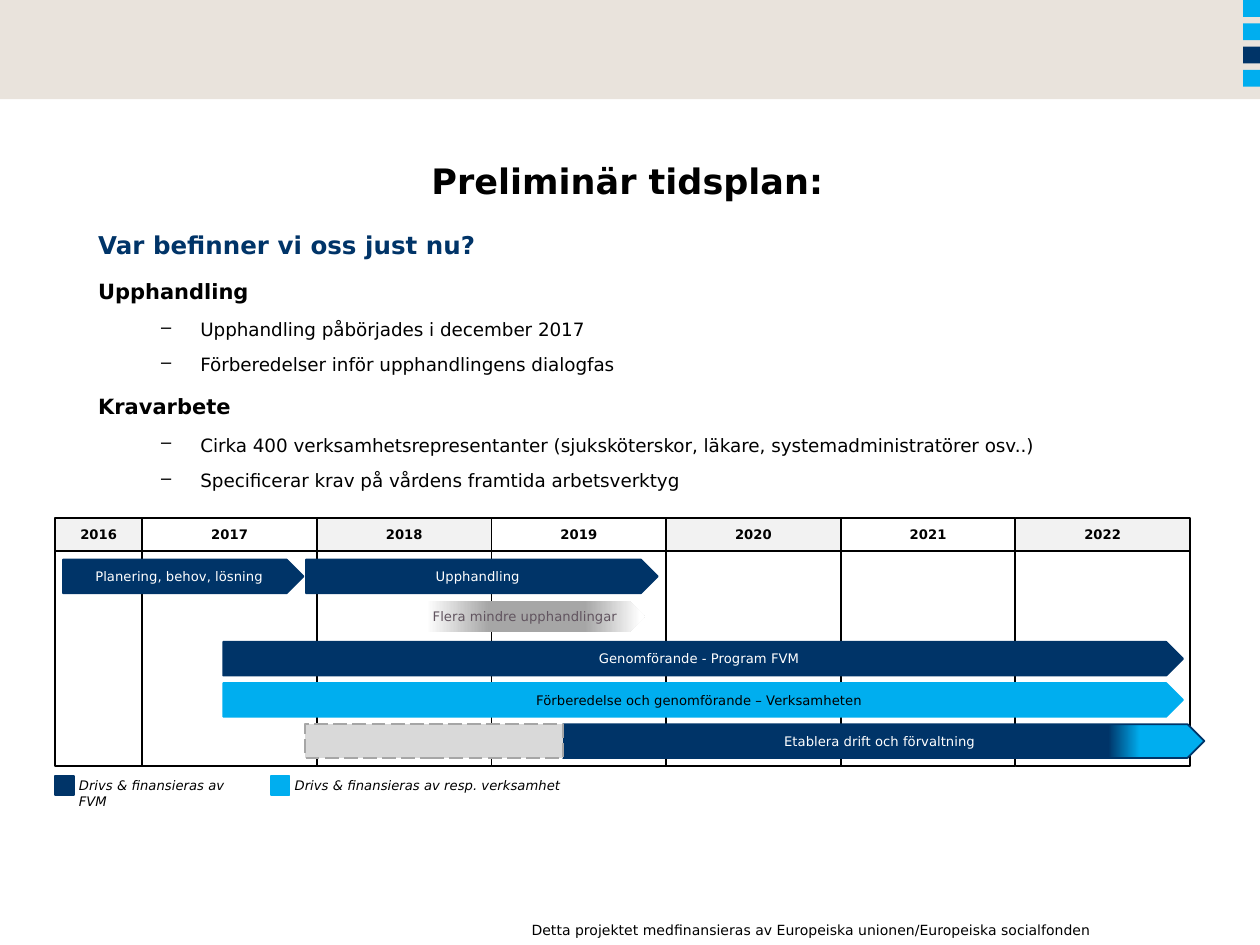
from lxml.etree import SubElement
from pptx import Presentation
from pptx.dml.color import RGBColor
from pptx.enum.dml import MSO_LINE
from pptx.enum.shapes import MSO_SHAPE
from pptx.enum.text import MSO_ANCHOR, PP_ALIGN
from pptx.oxml.ns import qn
from pptx.util import Cm, Pt

THEME = {
    "font": "DejaVu Sans",
    "navy": "003468", "cyan": "00AEEF", "sand": "E9E3DC", "black": "000000",
    "white": "FFFFFF", "light": "F2F2F2", "pale": "D9D9D9", "gray": "A6A6A6",
    "muted": "61545F",
    "title": 20, "question": 14, "heading": 12, "item": 10.5, "footer": 8, "label": 7.5,
}

# Content
TITLE = "Preliminär tidsplan:"
QUESTION = "Var befinner vi oss just nu?"
SECTIONS = [
    ("Upphandling", ["Upphandling påbörjades i december 2017",
                     "Förberedelser inför upphandlingens dialogfas"]),
    ("Kravarbete", ["Cirka 400 verksamhetsrepresentanter (sjuksköterskor, läkare, "
                    "systemadministratörer osv..)",
                    "Specificerar krav på vårdens framtida arbetsverktyg"]),
]
YEARS = [("2016", 0.5), ("2017", 1), ("2018", 1), ("2019", 1),
         ("2020", 1), ("2021", 1), ("2022", 1)]  # label, share of a year shown
FADE_GRAY = [(6, "white"), (33, "gray"), (74, "gray"), (98, "white")]
NAVY_TO_CYAN = [(85, "navy"), (90, "cyan")]
# row, left, width, fill or gradient stops, outline, text colour, label
PHASES = [
    (0, 1.27, 4.85, "navy", "navy", "white", "Planering, behov, lösning"),
    (0, 6.17, 7.09, "navy", "navy", "white", "Upphandling"),
    (1, 8.31, 4.7, FADE_GRAY, None, "muted", "Flera mindre upphandlingar"),
    (2, 4.5, 19.35, "navy", "navy", "white", "Genomförande - Program FVM"),
    (3, 4.5, 19.35, "cyan", "cyan", "black",
     "Förberedelse och genomförande – Verksamheten"),
    (4, 11.35, 12.93, NAVY_TO_CYAN, "navy", "white", "Etablera drift och förvaltning"),
]
LEGEND = [(1.11, 3.78, "navy", "Drivs & finansieras av FVM"),
          (5.46, 5.8, "cyan", "Drivs & finansieras av resp. verksamhet")]
FOOTER = "Detta projektet medfinansieras av Europeiska unionen/Europeiska socialfonden"
MARKS = ["cyan", "cyan", "navy", "cyan"]

# Timeline geometry in centimetres
GRID_LEFT, GRID_TOP, YEAR_WIDTH = 1.11, 10.44, 3.52
HEADER_HEIGHT, BODY_HEIGHT = 0.67, 4.34
ROW_TOP, ROW_PITCH, BAR_HEIGHT = 11.28, 0.83, 0.68


def color(name):
    return RGBColor.from_string(THEME[name])


def style(paragraph, size, ink="black", bold=False, italic=False):
    font = paragraph.font
    font.name, font.size = THEME["font"], Pt(THEME[size])
    font.bold, font.italic = bold, italic
    font.color.rgb = color(ink)


def set_frame(frame, insets, anchor=MSO_ANCHOR.TOP):
    frame.word_wrap = True
    frame.vertical_anchor = anchor
    (frame.margin_left, frame.margin_top,
     frame.margin_right, frame.margin_bottom) = [Cm(inset) for inset in insets]


def set_gradient(shape, stops):
    shape.fill.gradient()
    shape.fill.gradient_angle = 0
    stop_list = shape.fill._fill._gradFill.find(qn("a:gsLst"))
    for old_stop in list(stop_list):
        stop_list.remove(old_stop)
    for position, name in stops:
        stop = SubElement(stop_list, qn("a:gs"), pos=str(position * 1000))
        SubElement(stop, qn("a:srgbClr"), val=THEME[name])


def add_box(slide, box, fill, outline=None, kind=MSO_SHAPE.RECTANGLE):
    shape = slide.shapes.add_shape(kind, *[Cm(length) for length in box])
    shape.shadow.inherit = False
    if isinstance(fill, list):
        set_gradient(shape, fill)
    else:
        shape.fill.solid()
        shape.fill.fore_color.rgb = color(fill)
    if outline:
        shape.line.color.rgb = color(outline)
        shape.line.width = Pt(1)
    else:
        shape.line.fill.background()
    return shape


def label_box(shape, label, ink, side=0.0, bold=False):
    frame = shape.text_frame
    set_frame(frame, (side, 0, side, 0), MSO_ANCHOR.MIDDLE)
    frame.text = label
    frame.paragraphs[0].alignment = PP_ALIGN.CENTER
    style(frame.paragraphs[0], "label", ink, bold)


def add_text(slide, box, text, size, ink="black", bold=False, italic=False,
             align=PP_ALIGN.LEFT, insets=(0.25, 0.13, 0.25, 0.13), anchor=MSO_ANCHOR.TOP):
    frame = slide.shapes.add_textbox(*[Cm(length) for length in box]).text_frame
    set_frame(frame, insets, anchor)
    frame.text = text
    frame.paragraphs[0].alignment = align
    style(frame.paragraphs[0], size, ink, bold, italic)
    return frame


def space(paragraph, line, before, after):
    paragraph.line_spacing = line
    paragraph.space_before, paragraph.space_after = Pt(before), Pt(after)


def add_dash(paragraph):
    properties = paragraph._p.get_or_add_pPr()
    properties.set("marL", str(Cm(2.06)))
    properties.set("indent", str(-Cm(0.79)))
    SubElement(properties, qn("a:buChar"), char="–")


def add_sections(slide):
    frame = slide.shapes.add_textbox(Cm(1.73), Cm(5.33), Cm(22.86), Cm(8.2)).text_frame
    set_frame(frame, (0.25, 0.13, 0.25, 0.13))
    for index, (heading, items) in enumerate(SECTIONS):
        topic = frame.add_paragraph() if index else frame.paragraphs[0]
        topic.text = heading
        space(topic, 1.3, 5 if index else 0, 2)
        style(topic, "heading", bold=True)
        for item in items:
            point = frame.add_paragraph()
            point.text = item
            point.level = 1
            space(point, 1.2, 4, 1)
            add_dash(point)
            style(point, "item")


def add_timeline(slide):
    # Year columns
    left = GRID_LEFT
    for index, (year, share) in enumerate(YEARS):
        width = share * YEAR_WIDTH
        header = add_box(slide, (left, GRID_TOP, width, HEADER_HEIGHT),
                         "white" if index % 2 else "light", "black")
        label_box(header, year, "black", bold=True)
        add_box(slide, (left, GRID_TOP + HEADER_HEIGHT, width, BODY_HEIGHT),
                "white", "black")
        left += width
    # Phase arrows
    for row, left, width, fill, outline, ink, label in PHASES:
        height = BAR_HEIGHT if outline else 0.64
        arrow = add_box(slide, (left, ROW_TOP + row * ROW_PITCH, width, height),
                        fill, outline, MSO_SHAPE.PENTAGON)
        label_box(arrow, label, ink, side=0.23)
    # Dashed lead-in to the last phase
    lead_in = add_box(slide, (6.15, ROW_TOP + 4 * ROW_PITCH, 5.2, BAR_HEIGHT),
                      "pale", "gray")
    lead_in.line.dash_style = MSO_LINE.LONG_DASH


def main():
    presentation = Presentation()
    presentation.slide_width, presentation.slide_height = Cm(25.4), Cm(19.05)
    slide = presentation.slides.add_slide(presentation.slide_layouts[6])

    # Top band with colour marks, and footer
    add_box(slide, (0, 0, 25.4, 2), "sand")
    for index, mark in enumerate(MARKS):
        add_box(slide, (25.06, index * 0.47, 0.34, 0.34), mark)
    add_text(slide, (10.19, 18.44, 12.06, 0.6), FOOTER, "footer", align=PP_ALIGN.RIGHT)

    # Headings and status
    add_text(slide, (1.27, 2.36, 22.86, 1.8), TITLE, "title", bold=True,
             align=PP_ALIGN.CENTER, insets=(0, 0.1, 0.1, 0.1), anchor=MSO_ANCHOR.BOTTOM)
    question = add_text(slide, (1.98, 4.34, 22.86, 0.81), QUESTION, "question", "navy",
                        bold=True, insets=(0, 0.13, 0.25, 0.13))
    space(question.paragraphs[0], 1.3, 0, 2)
    add_sections(slide)

    add_timeline(slide)

    # Legend
    for left, width, fill, label in LEGEND:
        add_box(slide, (left, 15.65, 0.38, 0.38), fill, fill)
        add_text(slide, (left + 0.38, 15.57, width, 0.51), label, "label", italic=True,
                 insets=(0.1, 0.1, 0.1, 0.1))

    presentation.save("out.pptx")


if __name__ == "__main__":
    main()
